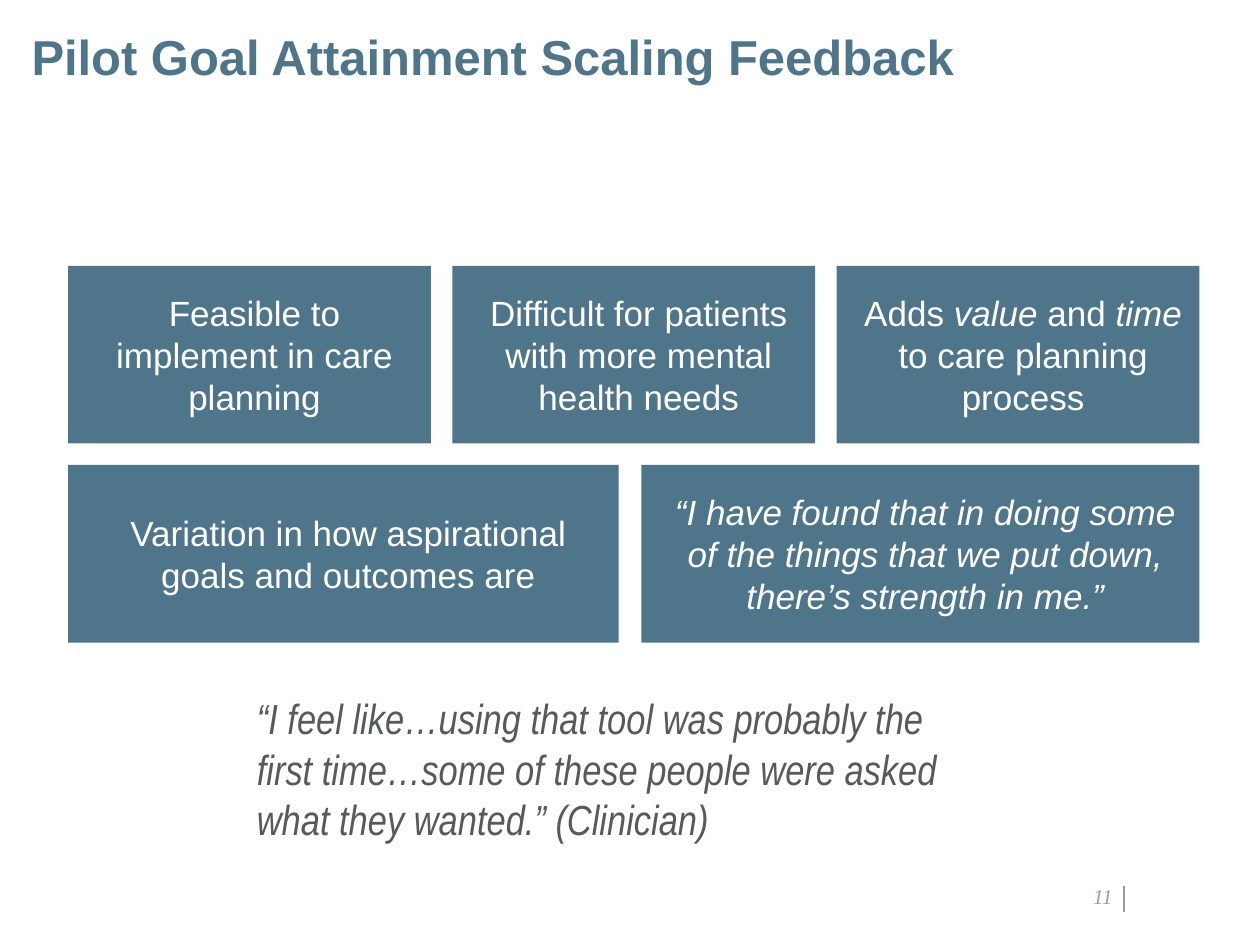
from pptx import Presentation
from pptx.dml.color import RGBColor
from pptx.enum.shapes import MSO_CONNECTOR, MSO_SHAPE
from pptx.enum.text import MSO_ANCHOR, PP_ALIGN
from pptx.oxml.ns import qn
from pptx.util import Inches, Pt
from lxml import etree

COLORS = {"blue": "4F758B", "white": "FFFFFF", "text": "565A5C", "gray": "989D9F"}

# Content: each text is a list of (words, italic) runs
TITLE = [("Pilot Goal Attainment Scaling Feedback", False)]
# One list per row of (card width, runs)
CARD_ROWS = [
    [
        (2.88, [("Feasible to implement in care planning", False)]),
        (2.88, [("Difficult for patients with more mental health needs", False)]),
        (2.88, [("Adds ", False), ("value", True), (" and ", False),
                ("time", True), (" to care planning process", False)]),
    ],
    [
        (4.37, [("Variation in how aspirational goals and outcomes are", False)]),
        (4.43, [("“I have found that in doing some of the things that we put down, "
                 "there’s strength in me.”", True)]),
    ],
]
QUOTE = [("“I feel like…using that tool was probably the first time…some of these "
          "people were asked what they wanted.” (Clinician)", True)]
PAGE_NUMBER = [("11", True)]

CARD_LEFT, CARD_RIGHT, CARD_TOP, CARD_HEIGHT, ROW_GAP = 0.54, 9.52, 2.11, 1.41, 0.17


def color(name):
    return RGBColor.from_string(COLORS[name])


def write(shape, runs, size, fill, font="Arial", bold=False, align=PP_ALIGN.LEFT,
          anchor=MSO_ANCHOR.TOP, insets=(0.1, 0.05, 0.1, 0.05), indent=0, spacing=None):
    frame = shape.text_frame
    frame.word_wrap = True
    frame.vertical_anchor = anchor
    (frame.margin_left, frame.margin_top,
     frame.margin_right, frame.margin_bottom) = map(Inches, insets)
    paragraph = frame.paragraphs[0]
    paragraph.alignment = align
    if spacing:
        paragraph.line_spacing = spacing
    if indent:
        properties = paragraph._p.get_or_add_pPr()
        properties.set("marL", str(Inches(indent)))
        properties.set("indent", "0")
    for words, italic in runs:
        run = paragraph.add_run()
        run.text = words
        run.font.name, run.font.size = font, Pt(size)
        run.font.bold, run.font.italic = bold, italic
        run.font.color.rgb = color(fill)


presentation = Presentation()
presentation.slide_width, presentation.slide_height = Inches(10), Inches(7.5)
slide = presentation.slides.add_slide(presentation.slide_layouts[5])
shapes = slide.shapes

# Title
title = shapes.title
title.left, title.top, title.width, title.height = map(Inches, (0.25, 0.26, 9.5, 0.41))
write(title, TITLE, 28, "blue", bold=True, insets=(0, 0, 0.1, 0), spacing=0.9)

# Feedback cards, each row spread evenly between the same edges
for row, cards in enumerate(CARD_ROWS):
    top = CARD_TOP + row * (CARD_HEIGHT + ROW_GAP)
    used = sum(width for width, _ in cards)
    gap = (CARD_RIGHT - CARD_LEFT - used) / (len(cards) - 1)
    left = CARD_LEFT
    for width, runs in cards:
        card = shapes.add_shape(MSO_SHAPE.RECTANGLE, Inches(left), Inches(top),
                                Inches(width), Inches(CARD_HEIGHT))
        card.shadow.inherit = False
        card.fill.solid()
        card.fill.fore_color.rgb = color("blue")
        card.line.fill.background()
        write(card, runs, 20, "white", align=PP_ALIGN.CENTER,
              anchor=MSO_ANCHOR.MIDDLE, insets=(0.1,) * 4, indent=0.08)
        left += width + gap

# Clinician quote
quote = shapes.add_textbox(Inches(1.87), Inches(5.45), Inches(5.72), Inches(1.31))
write(quote, QUOTE, 24, "text", font="Arial Narrow", indent=0.07)

# Page number and its rule
number = shapes.add_textbox(Inches(8.24), Inches(7.03), Inches(0.59), Inches(0.18))
write(number, PAGE_NUMBER, 12, "gray", font="Times New Roman", align=PP_ALIGN.RIGHT,
      anchor=MSO_ANCHOR.BOTTOM, insets=(0,) * 4)
rule = shapes.add_connector(MSO_CONNECTOR.STRAIGHT, Inches(8.92), Inches(7.03),
                            Inches(8.92), Inches(7.24))
rule.line.color.rgb = color("gray")
rule.line.width = Pt(1)
etree.SubElement(rule._element.spPr, qn("a:effectLst"))

presentation.save("out.pptx")
